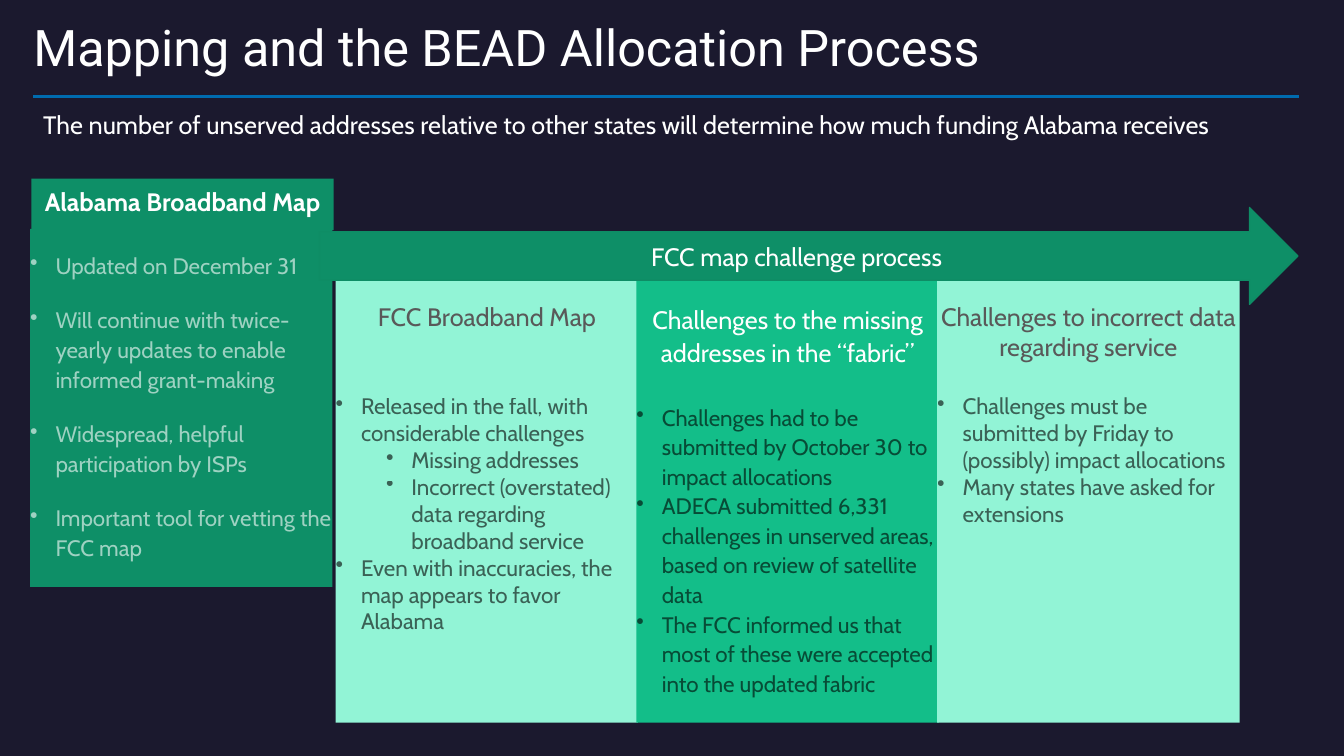
from dataclasses import dataclass

from lxml.etree import SubElement
from pptx import Presentation
from pptx.dml.color import RGBColor
from pptx.enum.shapes import MSO_CONNECTOR, MSO_SHAPE
from pptx.enum.text import MSO_ANCHOR, MSO_AUTO_SIZE, PP_ALIGN
from pptx.oxml.ns import qn
from pptx.util import Cm, Pt


@dataclass(frozen=True)
class Theme:
    background: str = "1B192E"
    white: str = "FFFFFF"
    black: str = "000000"
    grey: str = "595959"
    blue: str = "006BAE"
    deep_green: str = "0E8F67"
    arrow_edge: str = "0E8D65"
    mid_green: str = "13BE89"
    mint: str = "92F4D6"
    title_font: str = "Roboto"
    body_font: str = "Cabin"
    title_size: int = 36
    heading_size: int = 18
    bullet_size: int = 16
    bullet_opacity: int = 60


class SlideBuilder:
    def __init__(self, slide, theme):
        self.slide = slide
        self.theme = theme
        fill = slide.background.fill
        fill.solid()
        fill.fore_color.rgb = RGBColor.from_string(theme.background)

    def style(self, paragraph, color, size=None, font_name=None, bold=False):
        font = paragraph.font
        font.name = font_name or self.theme.body_font
        font.size = Pt(size or self.theme.heading_size)
        font.bold = bold
        font.color.rgb = RGBColor.from_string(color)

    def title(self, text):
        title = self.slide.shapes.title
        title.left, title.top, title.width, title.height = Cm(0.84), Cm(0.58), Cm(32.23), Cm(1.75)
        frame = title.text_frame
        frame.text = text
        frame.auto_size = MSO_AUTO_SIZE.NONE
        frame.vertical_anchor = MSO_ANCHOR.TOP
        self.set_insets(frame)
        paragraph = frame.paragraphs[0]
        paragraph.alignment = PP_ALIGN.LEFT
        paragraph.line_spacing = 0.9
        self.style(paragraph, self.theme.white, self.theme.title_size, self.theme.title_font)

    def rule(self, left, right, y):
        line = self.slide.shapes.add_connector(
            MSO_CONNECTOR.STRAIGHT, Cm(left), Cm(y), Cm(right), Cm(y))
        line.line.color.rgb = RGBColor.from_string(self.theme.blue)
        line.line.width = Pt(2.25)
        SubElement(line.element.spPr, qn("a:effectLst"))

    def subtitle(self, text, left, top, width, height):
        box = self.slide.shapes.add_textbox(Cm(left), Cm(top), Cm(width), Cm(height))
        box.text_frame.word_wrap = True
        box.text_frame.text = text
        self.style(box.text_frame.paragraphs[0], self.theme.white)

    def block(self, preset, left, top, width, height, fill):
        shape = self.slide.shapes.add_shape(preset, Cm(left), Cm(top), Cm(width), Cm(height))
        shape.shadow.inherit = False
        shape.fill.solid()
        shape.fill.fore_color.rgb = RGBColor.from_string(fill)
        shape.line.fill.background()
        shape.text_frame.word_wrap = True
        return shape

    def set_insets(self, frame, top=0):
        frame.margin_left = frame.margin_right = frame.margin_bottom = 0
        frame.margin_top = Cm(top)

    def label(self, shape, text, bold=False):
        frame = shape.text_frame
        frame.text = text
        frame.vertical_anchor = MSO_ANCHOR.MIDDLE
        paragraph = frame.paragraphs[0]
        paragraph.alignment = PP_ALIGN.CENTER
        self.style(paragraph, self.theme.white, bold=bold)
        return paragraph

    def banner(self, text, left, top, width, height):
        shape = self.block(MSO_SHAPE.RECTANGLE, left, top, width, height, self.theme.deep_green)
        self.set_insets(shape.text_frame)
        paragraph = self.label(shape, text, bold=True)
        paragraph.line_spacing = Pt(18)
        paragraph.space_before, paragraph.space_after = Pt(10), Pt(8)

    def arrow(self, text, left, top, width, height):
        shape = self.block(MSO_SHAPE.RIGHT_ARROW, left, top, width, height, self.theme.deep_green)
        shape.line.color.rgb = RGBColor.from_string(self.theme.arrow_edge)
        shape.line.width = Pt(1)
        self.label(shape, text)

    def bullet(self, paragraph, text, color, level=0):
        paragraph.text = text
        paragraph.level = level
        paragraph.alignment = PP_ALIGN.LEFT
        self.style(paragraph, color, self.theme.bullet_size)
        properties = paragraph.font.color.rgb and paragraph._p.get_or_add_pPr()
        properties.set("marL", str(Cm(0.64 + 1.27 * level)))
        properties.set("indent", str(-Cm(0.64)))
        rgb = properties.find(".//" + qn("a:srgbClr"))
        SubElement(rgb, qn("a:alpha")).set("val", str(self.theme.bullet_opacity * 1000))
        mark = SubElement(properties, qn("a:buChar"))
        mark.set("char", "•")
        properties.find(qn("a:defRPr")).addprevious(mark)

    def panel(self, left, top, width, height, fill, bullets, bullet_color, heading=None,
              heading_color=None, heading_gap=0, line_spacing=1.0, before=0, after=0):
        """Draw a filled column of (level, text) bullets under an optional heading."""
        shape = self.block(MSO_SHAPE.RECTANGLE, left, top, width, height, fill)
        frame = shape.text_frame
        frame.vertical_anchor = MSO_ANCHOR.TOP
        self.set_insets(frame, top=0.51)
        paragraph = frame.paragraphs[0]
        if heading:
            paragraph.text = heading
            paragraph.alignment = PP_ALIGN.CENTER
            paragraph.line_spacing = line_spacing
            paragraph.space_after = Pt(heading_gap)
            self.style(paragraph, heading_color)
            paragraph = frame.add_paragraph()
        for index, (level, text) in enumerate(bullets):
            if index:
                paragraph = frame.add_paragraph()
            paragraph.line_spacing = line_spacing
            paragraph.space_before, paragraph.space_after = Pt(before), Pt(after)
            self.bullet(paragraph, text, bullet_color, level)


STATE_MAP_POINTS = [
    (0, "Updated on December 31"),
    (0, "Will continue with twice-yearly updates to enable informed grant-making"),
    (0, "Widespread, helpful participation by ISPs"),
    (0, "Important tool for vetting the FCC map"),
]
FCC_MAP_POINTS = [
    (0, "Released in the fall, with considerable challenges"),
    (1, "Missing addresses"),
    (1, "Incorrect (overstated) data regarding broadband service"),
    (0, "Even with inaccuracies, the map appears to favor Alabama"),
]
FABRIC_POINTS = [
    (0, "Challenges had to be submitted by October 30 to impact allocations"),
    (0, "ADECA submitted 6,331 challenges in unserved areas, based on review of satellite data"),
    (0, "The FCC informed us that most of these were accepted into the updated fabric"),
]
SERVICE_POINTS = [
    (0, "Challenges must be submitted by Friday to (possibly) impact allocations"),
    (0, "Many states have asked for extensions"),
]


def main():
    theme = Theme()
    presentation = Presentation()
    presentation.slide_width, presentation.slide_height = Cm(33.87), Cm(19.05)
    builder = SlideBuilder(presentation.slides.add_slide(presentation.slide_layouts[5]), theme)

    builder.title("Mapping and the BEAD Allocation Process")
    builder.rule(0.84, 32.74, 2.44)
    builder.subtitle("The number of unserved addresses relative to other states will determine "
                     "how much funding Alabama receives", 0.84, 2.62, 31.52, 1.02)

    column_width = 7.62
    builder.panel(0.76, 5.77, column_width, 9.02, theme.deep_green, STATE_MAP_POINTS,
                  theme.white, line_spacing=1.1, before=10, after=8)
    # Heading, its colour, gap below it, fill, line spacing, bullets
    stages = [
        ("FCC Broadband Map", theme.grey, 43.7, theme.mint, 1.0, FCC_MAP_POINTS),
        ("Challenges to the missing addresses in the “fabric”", theme.white, 24,
         theme.mid_green, 1.1, FABRIC_POINTS),
        ("Challenges to incorrect data regarding service", theme.grey, 21.9,
         theme.mint, 1.0, SERVICE_POINTS),
    ]
    for index, (heading, color, gap, fill, spacing, points) in enumerate(stages):
        builder.panel(8.46 + 7.58 * index, 7.08, column_width, 11.13, fill, points, theme.black,
                      heading, color, gap, spacing)
    builder.banner("Alabama Broadband Map", 0.79, 4.5, column_width, 1.3)
    builder.arrow("FCC map challenge process", 8.05, 5.23, 24.66, 2.44)
    presentation.save("out.pptx")


if __name__ == "__main__":
    main()
